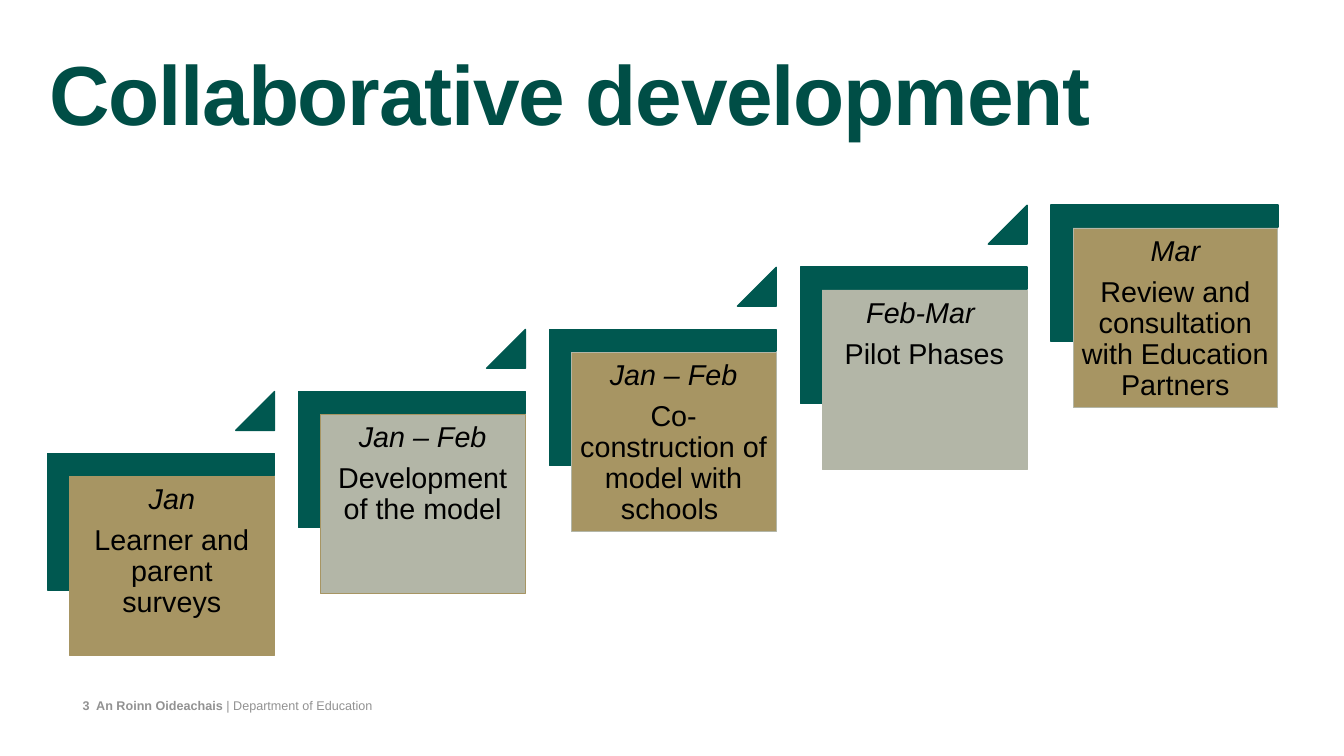
from dataclasses import dataclass
from typing import Any

from pptx import Presentation
from pptx.dml.color import RGBColor
from pptx.enum.shapes import MSO_SHAPE
from pptx.enum.text import MSO_ANCHOR, PP_ALIGN
from pptx.util import Pt

RECTANGLE = MSO_SHAPE.RECTANGLE
CORNER = MSO_SHAPE.CORNER
TRIANGLE = MSO_SHAPE.ISOSCELES_TRIANGLE
TOP, MIDDLE = MSO_ANCHOR.TOP, MSO_ANCHOR.MIDDLE
LEFT, CENTER = PP_ALIGN.LEFT, PP_ALIGN.CENTER

COLORS = {
    "title": "004E46",
    "green": "005850",
    "gold": "A79563",
    "sage": "B3B6A7",
    "text": "000000",
    "footer": "929292",
}

STEPS = [
    ("Jan", "Learner and parent surveys", "gold", "gold"),
    ("Jan – Feb", "Development of the model", "sage", "gold"),
    ("Jan – Feb", "Co-construction of model with schools ", "gold", "sage"),
    ("Feb-Mar ", "Pilot Phases", "sage", "sage"),
    ("Mar", "Review and consultation with Education Partners", "gold", "sage"),
]
STEP_RIGHT, STEP_UP = 358.4, 88.7


@dataclass
class SlideBuilder:
    page: Any
    font: str = "Arial"

    def color(self, name):
        return RGBColor.from_string(COLORS[name])

    def frame(self, box, margin, anchor, wrap=True):
        frame = box.text_frame
        frame.word_wrap = wrap
        frame.vertical_anchor = anchor
        frame.margin_left = frame.margin_right = Pt(margin)
        frame.margin_top = frame.margin_bottom = Pt(margin)
        return frame

    def span(self, para, text, size, color, bold=False, italic=False):
        span = para.add_run()
        span.text = text
        span.font.name = self.font
        span.font.size = Pt(size)
        span.font.bold = bold
        span.font.italic = italic
        span.font.color.rgb = self.color(color)
        return span

    def title(self, text, left, top, width, height):
        box = self.page.shapes.title
        box.left, box.top, box.width, box.height = map(Pt, (left, top, width, height))
        frame = self.frame(box, 3.6, TOP)
        frame.margin_top = Pt(13)
        para = frame.paragraphs[0]
        para.alignment = LEFT
        para.line_spacing = 0.8
        span = self.span(para, text, 119.7, "title", bold=True)
        span.font._element.set("spc", "-180")

    def shape(self, kind, left, top, width, height, fill, line, weight):
        shape = self.page.shapes.add_shape(kind, *map(Pt, (left, top, width, height)))
        shape.shadow.inherit = False
        shape.fill.solid()
        shape.fill.fore_color.rgb = self.color(fill)
        shape.line.color.rgb = self.color(line)
        shape.line.width = Pt(weight)
        return shape

    def bracket(self, left, top):
        corner = self.shape(CORNER, left, top, 195, 324, "green", "green", 2)
        corner.rotation = 90
        corner.adjustments[0] = corner.adjustments[1] = 0.161

    def card(self, left, top, date, task, fill, line):
        card = self.shape(RECTANGLE, left, top, 292.3, 256.3, fill, line, 0.75)
        frame = self.frame(card, 12.3, TOP)
        for para, text, italic in (
            (frame.paragraphs[0], date, True),
            (frame.add_paragraph(), task, False),
        ):
            para.alignment = CENTER
            para.line_spacing = 0.9
            para.space_after = Pt(14.35)
            self.span(para, text, 41, "text", italic=italic)

    def pointer(self, left, top):
        pointer = self.shape(TRIANGLE, left, top, 55.4, 55.4, "green", "green", 2)
        pointer.adjustments[0] = 1

    def footer(self, left, top, width, height):
        box = self.page.shapes.add_textbox(*map(Pt, (left, top, width, height)))
        para = self.frame(box, 4.3, MIDDLE, wrap=False).paragraphs[0]
        self.span(para, "3  An Roinn Oideachais ", 18, "footer", bold=True)
        self.span(para, "| Department of Education", 18, "footer")


def main():
    deck = Presentation()
    deck.slide_width, deck.slide_height = Pt(1920), Pt(1080)
    builder = SlideBuilder(deck.slides.add_slide(deck.slide_layouts[5]))
    builder.title("Collaborative development", 67, 74, 1626, 180)
    for index, (date, task, fill, line) in enumerate(STEPS):
        right, up = index * STEP_RIGHT, index * STEP_UP
        builder.bracket(132.5 + right, 583.2 - up)
        builder.card(99.4 + right, 680.4 - up, date, task, fill, line)
        if index < len(STEPS) - 1:
            builder.pointer(336.8 + right, 559.4 - up)
    builder.footer(113.8, 993, 444, 30)
    deck.save("out.pptx")


if __name__ == "__main__":
    main()
